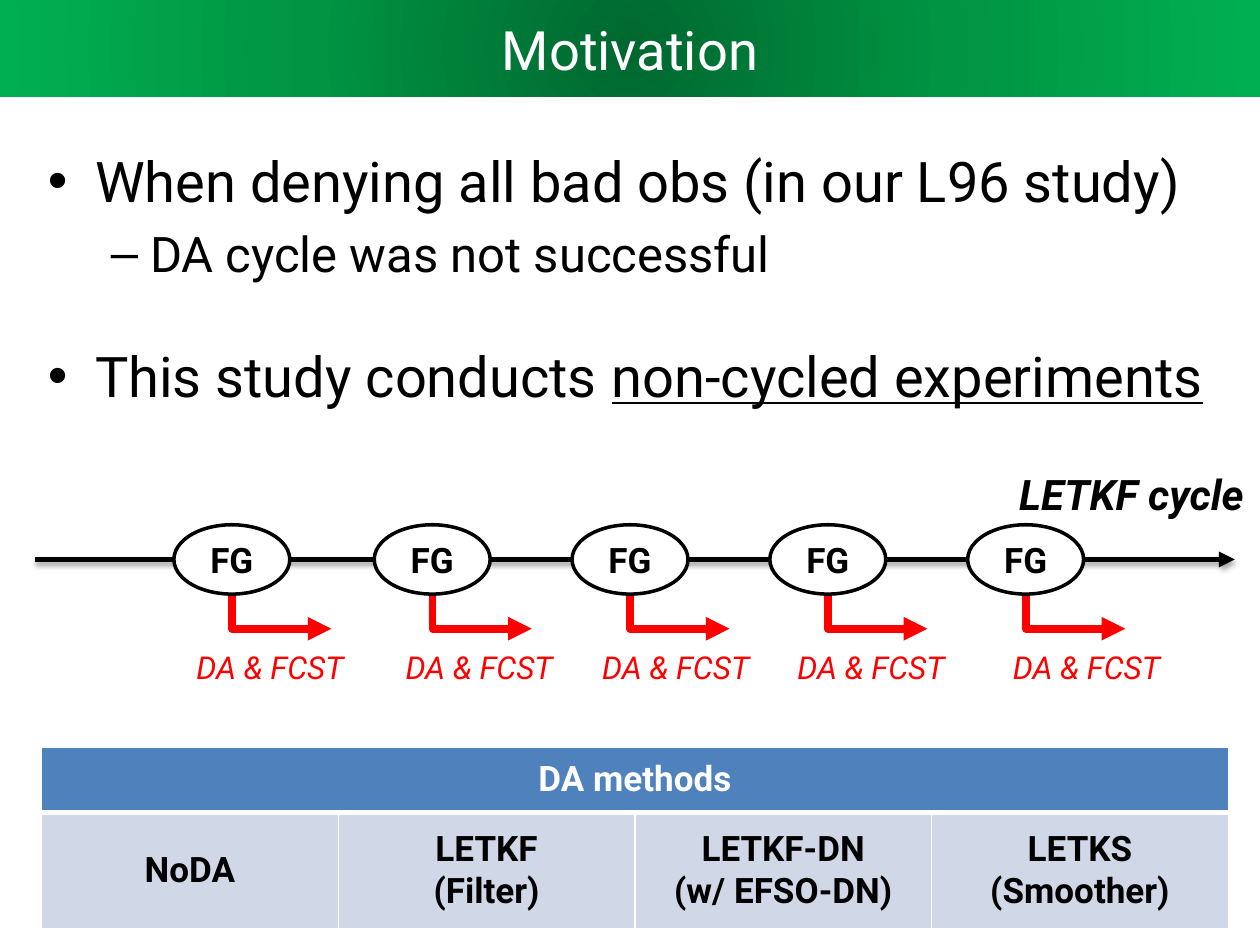
from dataclasses import dataclass

from lxml import etree
from pptx import Presentation
from pptx.dml.color import RGBColor
from pptx.enum.shapes import MSO_CONNECTOR, MSO_SHAPE
from pptx.enum.text import MSO_ANCHOR, MSO_AUTO_SIZE, PP_ALIGN
from pptx.oxml import parse_xml
from pptx.oxml.ns import nsdecls, qn
from pptx.util import Inches, Pt

CENTER = PP_ALIGN.CENTER
LEFT = PP_ALIGN.LEFT
MIDDLE = MSO_ANCHOR.MIDDLE
TOP = MSO_ANCHOR.TOP
NO_FIT = MSO_AUTO_SIZE.NONE
GROW = MSO_AUTO_SIZE.SHAPE_TO_FIT_TEXT
STRAIGHT = MSO_CONNECTOR.STRAIGHT
ELBOW = MSO_CONNECTOR.ELBOW
OVAL = MSO_SHAPE.OVAL


@dataclass(frozen=True)
class Theme:
    font: str = "Roboto"
    black: str = "000000"
    white: str = "FFFFFF"
    red: str = "FF0000"
    header: str = "4F81BD"
    cell: str = "D0D8E8"
    greens: tuple = ("00682F", "009443", "00B050")
    title: int = 31
    body: int = 32
    detail: int = 28
    label: int = 24
    node: int = 20
    note: int = 18


THEME = Theme()


def color(value):
    return RGBColor.from_string(value)


def place(shape, box):
    shape.left, shape.top, shape.width, shape.height = map(Inches, box)


def style_paragraph(para, size, tone, bold=False, italic=False):
    for span in para.runs:
        span.font.name = THEME.font
        span.font.size = Pt(size)
        span.font.color.rgb = color(tone)
        span.font.bold = bold
        span.font.italic = italic


def write(frame, text, size, tone, bold=False, italic=False, align=CENTER):
    frame.text = text
    for para in frame.paragraphs:
        para.alignment = align
        style_paragraph(para, size, tone, bold, italic)


def add_title(page, box):
    title = page.shapes.title
    place(title, box)
    stops = "".join(
        f'<a:gs pos="{index * 50000}"><a:srgbClr val="{tone}"/></a:gs>'
        for index, tone in enumerate(THEME.greens)
    )
    title.element.spPr.append(parse_xml(
        f'<a:gradFill {nsdecls("a")} rotWithShape="1"><a:gsLst>{stops}</a:gsLst>'
        '<a:path path="circle"><a:fillToRect l="50000" t="50000" r="50000" b="50000"/>'
        "</a:path></a:gradFill>"
    ))
    write(title.text_frame, "Motivation", THEME.title, THEME.white)
    title.text_frame.vertical_anchor = MIDDLE
    title.text_frame.auto_size = NO_FIT


def add_body(page, box):
    body = page.placeholders[1]
    place(body, box)
    frame = body.text_frame
    frame.auto_size = NO_FIT
    frame.vertical_anchor = TOP
    frame.text = (
        "When denying all bad obs (in our L96 study)\n"
        "DA cycle was not successful\n"
        "This study conducts "
    )
    first, detail, last = frame.paragraphs
    detail.level = 1
    last.space_before = Pt(34)
    emphasis = last.add_run()
    emphasis.text = "non-cycled experiments"
    emphasis.font.underline = True
    for para, size in ((first, THEME.body), (detail, THEME.detail), (last, THEME.body)):
        style_paragraph(para, size, THEME.black)


def add_arrow(page, kind, start, end, tone, width):
    arrow = page.shapes.add_connector(kind, *map(Inches, start + end))
    arrow.line.color.rgb = color(tone)
    arrow.line.width = Pt(width)
    etree.SubElement(arrow.line._get_or_add_ln(), qn("a:tailEnd"), type="triangle")
    effects = etree.SubElement(arrow._element.spPr, qn("a:effectLst"))
    return arrow, effects


def add_label(page, text, box, size, tone, bold=False):
    label = page.shapes.add_textbox(*map(Inches, box))
    label.text_frame.word_wrap = False
    label.text_frame.auto_size = GROW
    write(label.text_frame, text, size, tone, bold, True, LEFT)


def add_branch(page, left, top):
    branch, _ = add_arrow(
        page, ELBOW, (left, top), (left + 0.79, top + 0.34), THEME.red, 4.5
    )
    guides = branch._element.spPr.find(qn("a:prstGeom")).get_or_add_avLst()
    etree.SubElement(guides, qn("a:gd"), name="adj1", fmla="val 300")


def add_node(page, box):
    node = page.shapes.add_shape(OVAL, *map(Inches, box))
    node.shadow.inherit = False
    node.fill.solid()
    node.fill.fore_color.rgb = color(THEME.white)
    node.line.color.rgb = color(THEME.black)
    node.line.width = Pt(2)
    node.text_frame.vertical_anchor = MIDDLE
    write(node.text_frame, "FG", THEME.node, THEME.black, True)


def add_cycle(page, box):
    left, top, width, height = box
    axis = top + 0.77
    node_width, node_height = 0.92, 0.55
    node_lefts = [left + offset for offset in (1.1, 2.69, 4.26, 5.83, 7.4)]
    note_lefts = [left + offset for offset in (1.18, 2.84, 4.4, 5.95, 7.66)]
    for node_left in node_lefts:
        add_branch(page, node_left + node_width / 2, axis + 0.21)
    _, effects = add_arrow(
        page, STRAIGHT, (left, axis), (left + width, axis), THEME.black, 3
    )
    effects.append(parse_xml(
        f'<a:outerShdw {nsdecls("a")} blurRad="40000" dist="23000" dir="5400000" '
        f'rotWithShape="0"><a:srgbClr val="{THEME.black}"><a:alpha val="35000"/>'
        "</a:srgbClr></a:outerShdw>"
    ))
    add_label(page, "LETKF cycle", (left + 7.71, top, 2.01, 0.5),
              THEME.label, THEME.black, True)
    for node_left in node_lefts:
        add_node(page, (node_left, axis - node_height / 2, node_width, node_height))
    for note_left in note_lefts:
        add_label(page, "DA & FCST", (note_left, top + height - 0.4, 1.42, 0.4),
                  THEME.note, THEME.red)


def style_cell(cell, fill, bottom):
    properties = cell._tc.get_or_add_tcPr()
    for side, width in (("L", 1), ("R", 1), ("T", 1), ("B", bottom)):
        properties.append(parse_xml(
            f'<a:ln{side} {nsdecls("a")} w="{Pt(width)}"><a:solidFill>'
            f'<a:srgbClr val="{THEME.white}"/></a:solidFill></a:ln{side}>'
        ))
    cell.fill.solid()
    cell.fill.fore_color.rgb = color(fill)
    cell.vertical_anchor = MIDDLE


def add_methods(page, box):
    methods = ("NoDA", "LETKF\n(Filter)", "LETKF-DN\n(w/ EFSO-DN)", "LETKS\n(Smoother)")
    table = page.shapes.add_table(2, len(methods), *map(Inches, box)).table
    table.rows[0].height = Inches(0.52)
    table.rows[1].height = Inches(box[3] - 0.52)
    for index, method in enumerate(methods):
        style_cell(table.cell(0, index), THEME.header, 3)
        cell = table.cell(1, index)
        style_cell(cell, THEME.cell, 1)
        write(cell.text_frame, method, THEME.node, THEME.black, True)
    header = table.cell(0, 0)
    header.merge(table.cell(0, len(methods) - 1))
    write(header.text_frame, "DA methods", THEME.node, THEME.white, True)


def main():
    deck = Presentation()
    deck.slide_width, deck.slide_height = Inches(10), Inches(7.5)
    page = deck.slides.add_slide(deck.slide_layouts[1])
    add_title(page, (0, 0, 10, 0.77))
    add_body(page, (0.28, 1.11, 9.45, 3.16))
    add_cycle(page, (0.28, 3.67, 9.52, 1.82))
    add_methods(page, (0.33, 5.93, 9.42, 1.44))
    deck.save("out.pptx")


if __name__ == "__main__":
    main()
